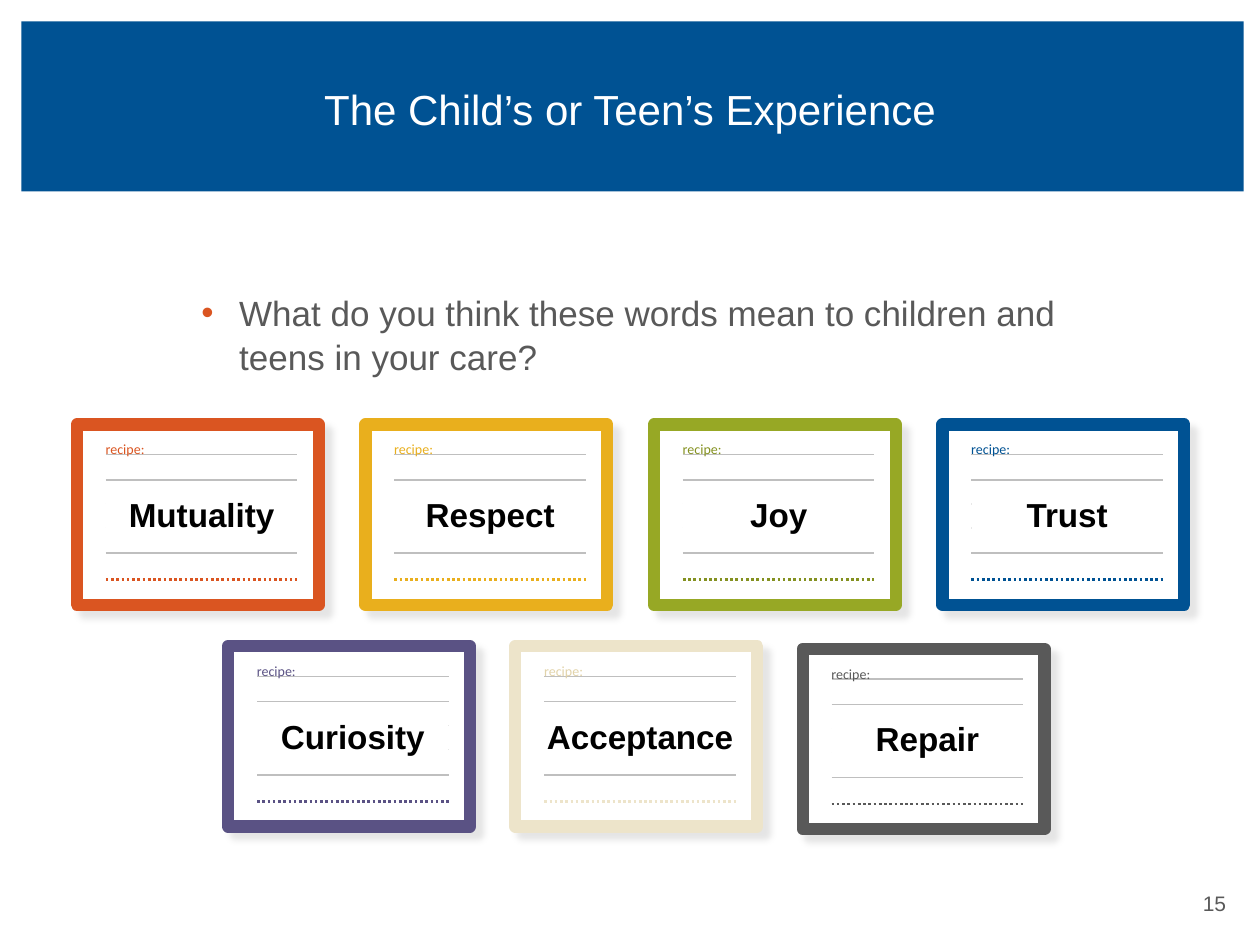
"""Builds the slide of seven recipe cards about the child's or teen's experience."""
from dataclasses import dataclass

from lxml import etree
from pptx import Presentation
from pptx.dml.color import RGBColor
from pptx.enum.dml import MSO_LINE
from pptx.enum.shapes import MSO_CONNECTOR, MSO_SHAPE
from pptx.enum.text import MSO_ANCHOR, MSO_AUTO_SIZE, PP_ALIGN
from pptx.oxml.ns import qn
from pptx.util import Inches, Pt

RECTANGLE = MSO_SHAPE.RECTANGLE
STRAIGHT = MSO_CONNECTOR.STRAIGHT
DOTTED = MSO_LINE.ROUND_DOT
MIDDLE = MSO_ANCHOR.MIDDLE
FIT_SHAPE = MSO_AUTO_SIZE.SHAPE_TO_FIT_TEXT
LEFT, CENTER, RIGHT = PP_ALIGN.LEFT, PP_ALIGN.CENTER, PP_ALIGN.RIGHT

WHITE = RGBColor(0xFF, 0xFF, 0xFF)
BLACK = RGBColor(0x00, 0x00, 0x00)
SILVER = RGBColor(0xBF, 0xBF, 0xBF)
GRAY = RGBColor(0x59, 0x59, 0x59)
BLUE = RGBColor(0x00, 0x52, 0x93)
ORANGE = RGBColor(0xDA, 0x55, 0x21)
GOLD = RGBColor(0xE9, 0xAF, 0x1D)
GREEN = RGBColor(0x97, 0xA8, 0x25)
DARK_GREEN = RGBColor(0x84, 0x91, 0x20)
PURPLE = RGBColor(0x5A, 0x52, 0x84)
CREAM = RGBColor(0xED, 0xE4, 0xCA)
DARK_CREAM = RGBColor(0xE2, 0xD3, 0xA9)

CARD_WIDTH, CARD_HEIGHT = 1.92, 1.43
RULE_INSET, RULE_WIDTH = 0.23, 1.52
OUTER_RULES = (0.24, 0.44, 1.02)
ALL_RULES = (0.24, 0.44, 0.63, 0.82, 1.02)
DOTTED_RULE = 1.23


@dataclass
class Card:
    """One recipe card: its word, place, colours and rules."""
    word: str
    left: float
    top: float
    frame: RGBColor
    label: RGBColor
    dots: RGBColor
    rules: tuple = ALL_RULES
    word_width: float = RULE_WIDTH


CARDS = (
    Card("Mutuality", 0.61, 3.37, ORANGE, ORANGE, ORANGE),
    Card("Respect", 2.90, 3.37, GOLD, GOLD, GOLD, OUTER_RULES),
    Card("Joy", 5.19, 3.37, GREEN, DARK_GREEN, DARK_GREEN),
    Card("Trust", 7.48, 3.37, BLUE, BLUE, BLUE),
    Card("Curiosity", 1.81, 5.13, PURPLE, PURPLE, PURPLE),
    Card("Acceptance", 4.09, 5.13, CREAM, DARK_CREAM, CREAM, OUTER_RULES, 1.7),
    Card("Repair", 6.37, 5.15, GRAY, GRAY, GRAY),
)


def write(para, text, size, color, font="Arial", bold=False, align=LEFT):
    """Add one formatted run to a paragraph."""
    para.alignment = align
    span = para.add_run()
    span.text = text
    span.font.name = font
    span.font.size = Pt(size)
    span.font.bold = bold
    span.font.color.rgb = color


def add_text(page, left, top, width, height):
    """Add a wrapping text box."""
    box = page.shapes.add_textbox(Inches(left), Inches(top), Inches(width), Inches(height))
    box.text_frame.word_wrap = True
    return box


def add_box(page, left, top, width, height, fill):
    """Add a plain filled rectangle."""
    box = page.shapes.add_shape(
        RECTANGLE, Inches(left), Inches(top), Inches(width), Inches(height))
    box.shadow.inherit = False
    box.fill.solid()
    box.fill.fore_color.rgb = fill
    box.line.fill.background()
    return box


def add_rule(group, left, top, color, weight, dash=None):
    """Add one horizontal writing line to a card's group."""
    rule = group.shapes.add_connector(
        STRAIGHT, Inches(left), Inches(top), Inches(left + RULE_WIDTH), Inches(top))
    rule.line.color.rgb = color
    rule.line.width = Pt(weight)
    if dash:
        rule.line.dash_style = dash
    etree.SubElement(rule.element.spPr, qn("a:effectLst"))


def add_soft_shadow(box):
    """Give a shape a faint shadow to the lower right."""
    effects = box.element.spPr.find(qn("a:effectLst"))
    shadow = etree.SubElement(
        effects, qn("a:outerShdw"), blurRad=str(Pt(4)), dist=str(Pt(6)),
        dir="2700000", algn="tl", rotWithShape="0")
    color = etree.SubElement(shadow, qn("a:srgbClr"), val=str(BLACK))
    etree.SubElement(color, qn("a:alpha"), val="10000")


def add_frame(page, card):
    """Add a card's coloured frame."""
    frame = add_box(page, card.left, card.top, CARD_WIDTH, CARD_HEIGHT, WHITE)
    frame.line.color.rgb = card.frame
    frame.line.width = Pt(7)
    add_soft_shadow(frame)


def add_card(page, card):
    """Add a card's frame, writing lines, label and word."""
    add_frame(page, card)
    left = card.left + RULE_INSET
    group = page.shapes.add_group_shape()
    for offset in card.rules:
        add_rule(group, left, card.top + offset, SILVER, 0.75)
    add_rule(group, left, card.top + DOTTED_RULE, card.dots, 1.5, DOTTED)

    label = add_text(page, card.left + 0.13, card.top + 0.08, 0.73, 0.24)
    label.text_frame.auto_size = FIT_SHAPE
    write(label.text_frame.paragraphs[0], "recipe:", 8, card.label, "Calibri")

    word_left = left + (RULE_WIDTH - card.word_width) / 2
    word = add_box(page, word_left, card.top + 0.5, card.word_width, 0.42, WHITE)
    word.text_frame.word_wrap = card.word_width == RULE_WIDTH
    word.text_frame.auto_size = FIT_SHAPE
    write(word.text_frame.paragraphs[0], card.word, 19, BLACK, bold=True, align=CENTER)


def add_title(page):
    """Place the title over its blue band."""
    title = page.shapes.title
    title.left, title.top = Inches(0.5), Inches(0.3)
    title.width, title.height = Inches(9), Inches(1.12)
    title.text_frame.vertical_anchor = MIDDLE
    write(title.text_frame.paragraphs[0], "The Child’s or Teen’s Experience",
          24, WHITE, align=CENTER)
    band = add_box(page, 0.17, 0.17, 9.7, 1.35, BLUE)
    title.element.addprevious(band.element)


def add_question(page):
    """Add the bulleted question."""
    para = add_text(page, 1.5, 2.25, 7.17, 0.83).text_frame.paragraphs[0]
    write(para, "What do you think these words mean to children and teens in your care?",
          20, GRAY)
    para.line_spacing = Pt(25)
    para.space_before = Pt(12)
    properties = para._p.get_or_add_pPr()
    properties.set("marL", str(Inches(0.3)))
    properties.set("indent", str(Inches(-0.3)))
    color = etree.SubElement(properties, qn("a:buClr"))
    etree.SubElement(color, qn("a:srgbClr"), val=str(ORANGE))
    etree.SubElement(properties, qn("a:buFont"), typeface="Arial")
    etree.SubElement(properties, qn("a:buChar"), char="•")


def main():
    """Build and save the deck."""
    deck = Presentation()
    deck.slide_width, deck.slide_height = Inches(10), Inches(7.5)
    page = deck.slides.add_slide(deck.slide_layouts[5])
    add_title(page)
    add_question(page)
    for card in CARDS:
        add_card(page, card)
    number = add_text(page, 7.5, 7.02, 2.33, 0.32)
    write(number.text_frame.paragraphs[0], "15", 12, GRAY, align=RIGHT)
    deck.save("out.pptx")


if __name__ == "__main__":
    main()
